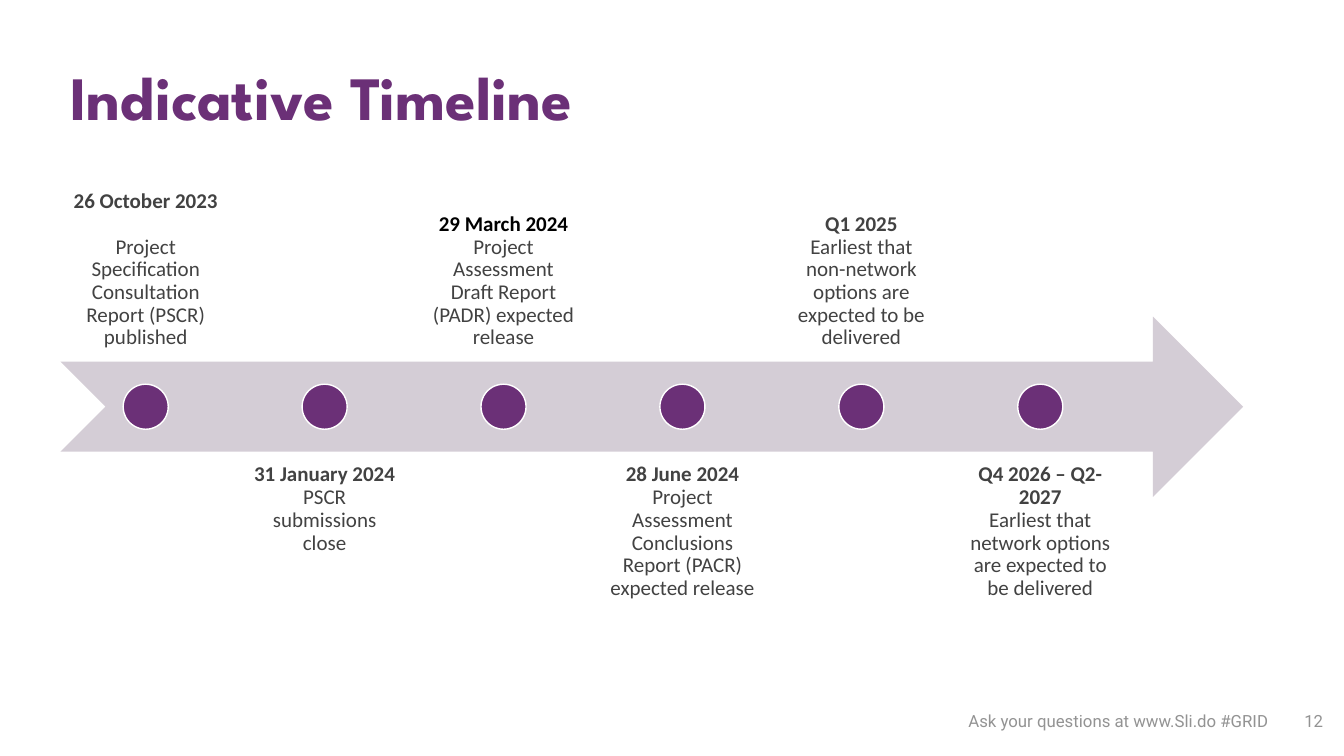
from pptx import Presentation
from pptx.dml.color import RGBColor
from pptx.enum.shapes import MSO_SHAPE
from pptx.enum.text import MSO_ANCHOR, PP_ALIGN
from pptx.util import Inches, Pt

PURPLE, LILAC, WHITE = "6B3077", "D4CDD6", "FFFFFF"
BLACK, DARK_GREY, GREY = "000000", "424242", "939393"

# Date, date colour, gap below the date in points, description
MILESTONES = [
    ("26 October 2023", DARK_GREY, 16.2,
     "Project Specification Consultation Report (PSCR) published"),
    ("31 January 2024", DARK_GREY, 0, "PSCR submissions close"),
    ("29 March 2024", BLACK, 0,
     "Project Assessment Draft Report (PADR) expected release"),
    ("28 June 2024", DARK_GREY, 0,
     "Project Assessment Conclusions Report (PACR) expected release"),
    ("Q1 2025", DARK_GREY, 0,
     "Earliest that non-network options are expected to be delivered"),
    ("Q4 2026 – Q2-2027", DARK_GREY, 0,
     "Earliest that network options are expected to be delivered"),
]


def color(hex_code):
    return RGBColor.from_string(hex_code)


def style(paragraph, font_name, size, hex_code, bold=False, align=PP_ALIGN.LEFT):
    paragraph.alignment = align
    font = paragraph.font
    font.name, font.size, font.bold = font_name, Pt(size), bold
    font.color.rgb = color(hex_code)


def add_frame(slide, left, top, width, height, anchor=MSO_ANCHOR.TOP):
    box = slide.shapes.add_textbox(
        Inches(left), Inches(top), Inches(width), Inches(height))
    frame = box.text_frame
    frame.word_wrap = True
    frame.vertical_anchor = anchor
    return frame


def add_plain_shape(slide, kind, left, top, width, height, fill):
    shape = slide.shapes.add_shape(
        kind, Inches(left), Inches(top), Inches(width), Inches(height))
    shape.shadow.inherit = False
    shape.fill.solid()
    shape.fill.fore_color.rgb = color(fill)
    shape.line.fill.background()
    return shape


def add_title(slide, left, top, width, height):
    heading = add_frame(slide, left, top, width, height).paragraphs[0]
    heading.text = "Indicative Timeline"
    heading.line_spacing = 0.9
    style(heading, "League Spartan", 44, PURPLE, bold=True)


def add_milestone(slide, left, top, width, height, milestone, anchor):
    date_text, date_color, gap, description_text = milestone
    frame = add_frame(slide, left, top, width, height, anchor)
    frame.margin_left = frame.margin_right = Inches(0.12)
    frame.margin_top = frame.margin_bottom = Inches(0.12)
    date, description = frame.paragraphs[0], frame.add_paragraph()
    date.text, description.text = date_text, description_text
    date.line_spacing = description.line_spacing = 0.9
    date.space_after = Pt(gap)
    style(date, "Calibri", 15, date_color, True, PP_ALIGN.CENTER)
    style(description, "Calibri", 15, DARK_GREY, False, PP_ALIGN.CENTER)


def add_timeline(slide, left, top, width, height):
    # The arrow fills the middle third; labels alternate above and below
    band = height / 2.5
    arrow_top = top + 0.75 * band
    label_width = 1.69
    pitch = label_width * 1.05
    dot = band / 4
    add_plain_shape(slide, MSO_SHAPE.NOTCHED_RIGHT_ARROW,
                    left, arrow_top, width, band, LILAC)
    for index, milestone in enumerate(MILESTONES):
        label_left = left + index * pitch
        above = index % 2 == 0
        add_milestone(slide, label_left, top if above else top + 1.5 * band,
                      label_width, band, milestone,
                      MSO_ANCHOR.BOTTOM if above else MSO_ANCHOR.TOP)
        marker = add_plain_shape(
            slide, MSO_SHAPE.OVAL, label_left + (label_width - dot) / 2,
            arrow_top + (band - dot) / 2, dot, dot, PURPLE)
        marker.line.color.rgb = color(WHITE)
        marker.line.width = Pt(1)


def add_footer(slide, left, top, width, height):
    number_width = 0.6
    parts = [
        ("12", left + width - number_width, number_width, PP_ALIGN.CENTER),
        ("Ask your questions at www.Sli.do #GRID", left,
         width - number_width - 0.05, PP_ALIGN.RIGHT),
    ]
    for text, part_left, part_width, align in parts:
        frame = add_frame(slide, part_left, top, part_width, height,
                          MSO_ANCHOR.MIDDLE)
        frame.paragraphs[0].text = text
        style(frame.paragraphs[0], "Roboto", 12, GREY, align=align)


def main():
    deck = Presentation()
    deck.slide_width, deck.slide_height = Inches(13.33), Inches(7.5)
    slide = deck.slides.add_slide(deck.slide_layouts[6])
    add_title(slide, 0.6, 0.62, 10.81, 1.33)
    add_timeline(slide, 0.6, 1.8, 11.73, 4.47)
    add_footer(slide, 8.05, 6.95, 5.28, 0.4)
    deck.save("out.pptx")


if __name__ == "__main__":
    main()
